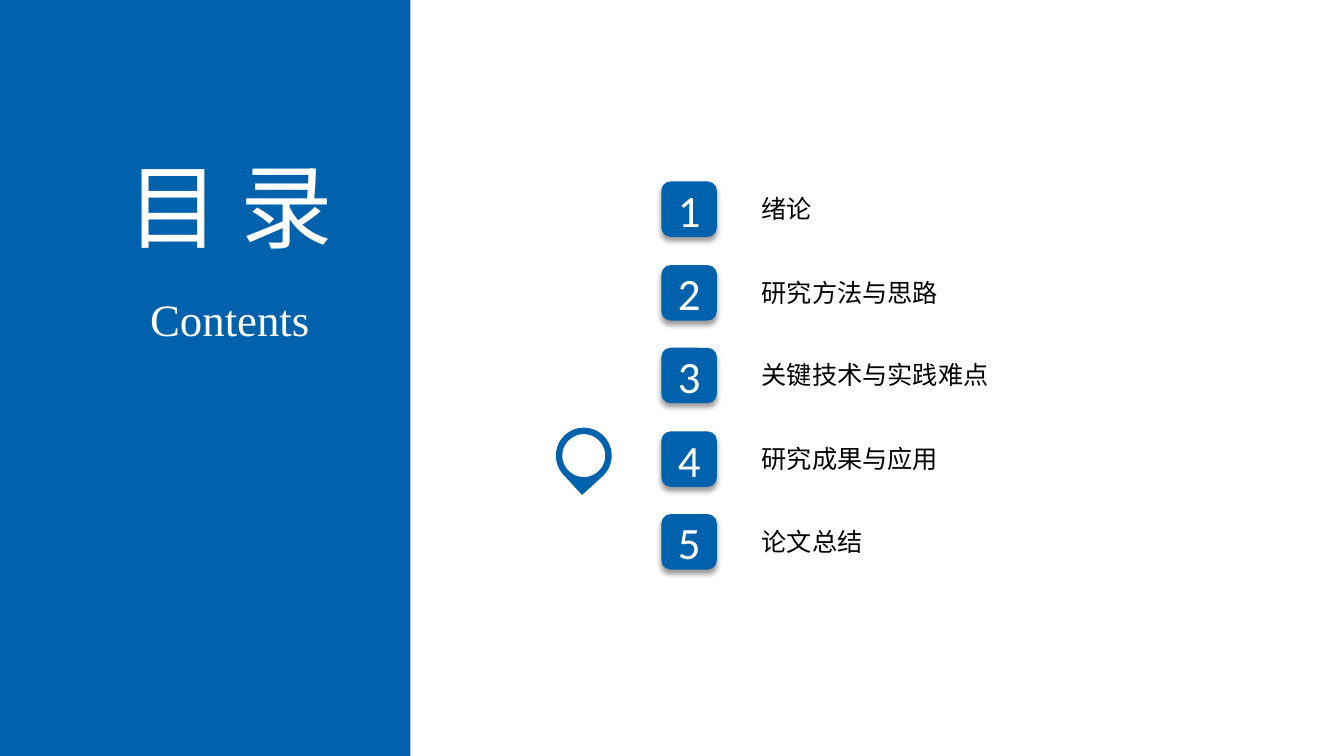
from dataclasses import dataclass

from lxml.etree import SubElement
from pptx import Presentation
from pptx.dml.color import RGBColor
from pptx.enum.shapes import MSO_SHAPE as Kind
from pptx.enum.text import MSO_ANCHOR as Anchor, MSO_AUTO_SIZE as Auto, PP_ALIGN as Align
from pptx.oxml.ns import qn
from pptx.util import Pt

PX = 9144  # 100 px to the inch


@dataclass(frozen=True)
class Theme:
    blue: str = "0062AC"
    white: str = "FFFFFF"
    black: str = "000000"
    han: str = "Noto Sans CJK SC"
    serif: str = "Times New Roman"
    sans: str = "Calibri"
    title: int = 66
    large: int = 32
    body: int = 18


class Board:
    def __init__(self, slide, theme):
        self.slide = slide
        self.theme = theme

    def shape(self, kind, box, fill, line=None, turn=0, group=None):
        owner = group or self.slide
        item = owner.shapes.add_shape(kind, *(n * PX for n in box))
        item.shadow.inherit = False
        item.rotation = turn
        item.fill.solid()
        item.fill.fore_color.rgb = RGBColor.from_string(fill)
        if line:
            item.line.color.rgb = RGBColor.from_string(line)
            item.line.width = Pt(1)
        else:
            item.line.fill.background()
        return item

    def shade(self, item):
        """Cast a soft shadow straight down."""
        effects = item.element.spPr.find(qn("a:effectLst"))
        outer = SubElement(effects, qn("a:outerShdw"), blurRad=str(Pt(4)),
                           dist=str(Pt(3)), dir="5400000", algn="t", rotWithShape="0")
        color = SubElement(outer, qn("a:srgbClr"), val=self.theme.black)
        SubElement(color, qn("a:alpha"), val="40000")

    def put_text(self, frame, text, size, font, color):
        para = frame.paragraphs[0]
        para.alignment = Align.CENTER
        run = para.add_run()
        run.text = text
        run.font.size = Pt(size)
        run.font.name = font
        run.font.color.rgb = RGBColor.from_string(color)
        SubElement(run.font._element, qn("a:ea"), typeface=font)

    def label(self, box, text, **style):
        frame = self.slide.shapes.add_textbox(*(n * PX for n in box)).text_frame
        frame.word_wrap = False
        frame.auto_size = Auto.SHAPE_TO_FIT_TEXT
        self.put_text(frame, text, **style)

    def badge(self, box, text):
        item = self.shape(Kind.ROUNDED_RECTANGLE, box, self.theme.blue)
        self.shade(item)
        item.text_frame.vertical_anchor = Anchor.MIDDLE
        self.put_text(item.text_frame, text, size=self.theme.large,
                      font=self.theme.sans, color=self.theme.white)

    def marker(self, left, top):
        """Draw a map pin that points at the current chapter."""
        theme = self.theme
        group = self.slide.shapes.add_group_shape()
        self.shape(Kind.TEAR, (left, top, 54, 54), theme.blue,
                   line=theme.blue, turn=137.5, group=group)
        self.shape(Kind.OVAL, (left + 5, top + 5, 44, 44), theme.white,
                   line=theme.blue, group=group)


CHAPTERS = ["绪论", "研究方法与思路", "关键技术与实践难点", "研究成果与应用", "论文总结"]


def main():
    deck = Presentation()
    deck.slide_width, deck.slide_height = 1333 * PX, 750 * PX
    theme = Theme()
    board = Board(deck.slides.add_slide(deck.slide_layouts[6]), theme)

    for index, name in enumerate(CHAPTERS):
        top = 180 + (165 * index + 1) // 2
        board.badge((656, top, 55, 55), str(index + 1))
        board.label((745, top + 7, 21 + 25 * len(name), 40), name,
                    size=theme.body, font=theme.han, color=theme.black)

    board.shape(Kind.RECTANGLE, (0, 0, 407, 750), theme.blue)
    board.label((102, 143, 252, 121), "目 录",
                size=theme.title, font=theme.han, color=theme.white)
    board.label((138, 284, 180, 64), "Contents",
                size=theme.large, font=theme.serif, color=theme.white)
    board.marker(552, 425)
    deck.save("out.pptx")


if __name__ == "__main__":
    main()
